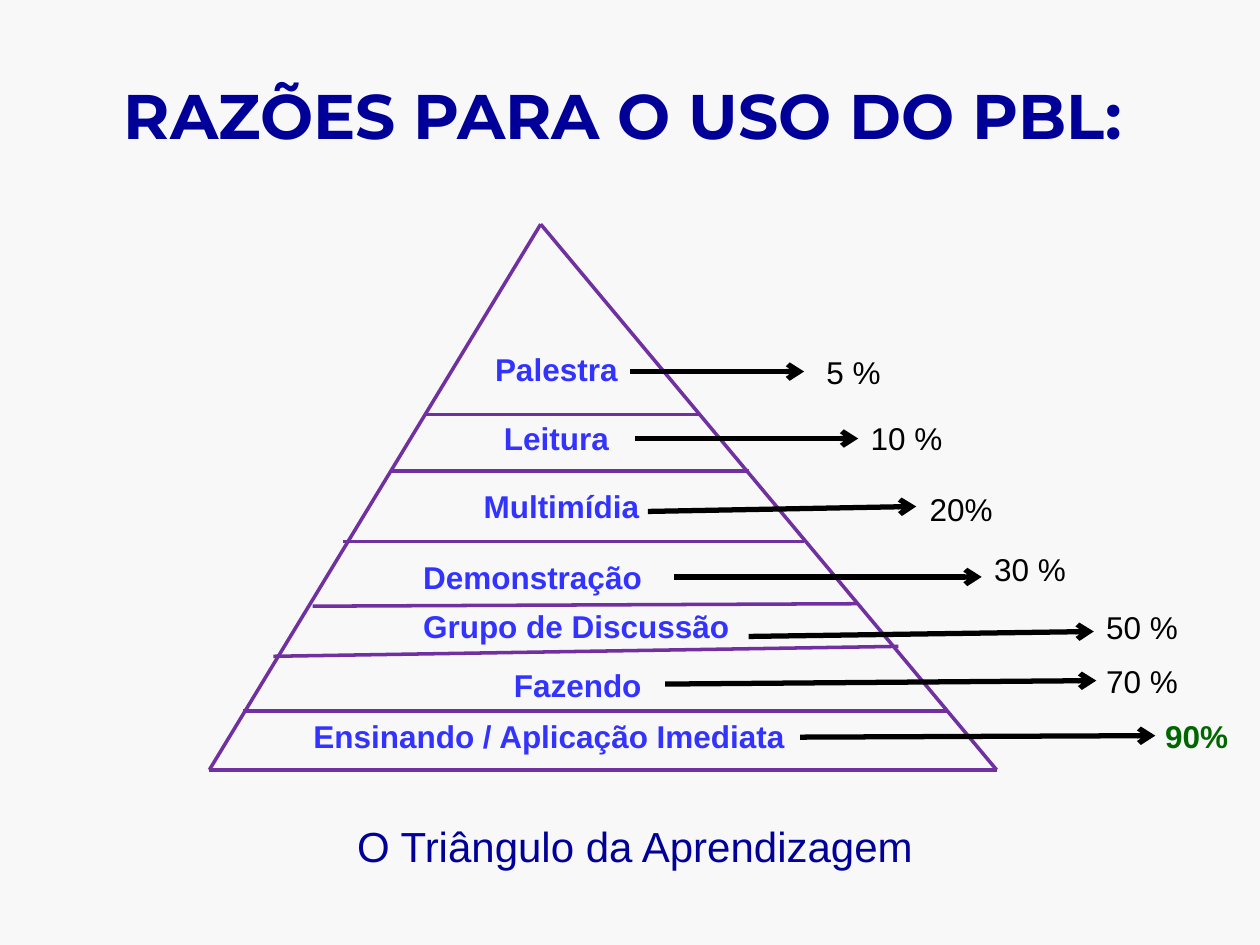
"""Build the learning triangle slide."""
from lxml.etree import SubElement
from pptx import Presentation
from pptx.dml.color import RGBColor
from pptx.enum.shapes import MSO_CONNECTOR
from pptx.enum.text import MSO_AUTO_SIZE, PP_ALIGN
from pptx.oxml.ns import qn
from pptx.util import Cm, Pt

THEME = {
    "bg": "F8F8F8", "navy": "000099", "label": "3333FF", "text": "000000",
    "accent": "006600", "edge": "7030A0",
    "heading_font": "Montserrat", "body_font": "Arial",
    "title_size": 36, "caption_size": 24, "body_size": 18,
    "edge_width": 2, "arrow_width": 3,
}
TITLE = "RAZÕES PARA O USO DO PBL:"
CAPTION = "O Triângulo da Aprendizagem"
LEVELS = [
    ("Palestra", (9.73, 6.93, 3.38), (12.7, 7.49, 16.21, 7.49), "5 %", (16.41, 6.99)),
    ("Leitura", (9.91, 8.33, 4.6), (12.8, 8.84, 17.3, 8.84), "10 %", (17.3, 8.33)),
    ("Multimídia", (9.5, 9.7, 4.6), (13.06, 10.31, 18.47, 10.21), "20%", (18.49, 9.75)),
    ("Demonstração", (8.28, 11.13, 5.44), (13.59, 11.63, 19.79, 11.63), "30 %", (19.79, 10.97)),
    ("Grupo de Discussão", (8.28, 12.12, 6.76), (15.09, 12.83, 22.05, 12.73), "50 %", (22.05, 12.14)),
    ("Fazendo", (10.11, 13.31, 4.6), (13.41, 13.79, 22.1, 13.72), "70 %", (22.05, 13.23)),
    ("Ensinando / Aplicação Imediata", (6.07, 14.33, 10.59), (16.13, 14.86, 23.29, 14.83), "90%", (23.24, 14.33)),
]
APEX, BASE_LEFT, BASE_RIGHT = (10.9, 4.52), (4.22, 15.52), (20.09, 15.52)
DIVIDERS = [
    (8.59, 8.36, 14.1, 8.36), (7.9, 9.5, 15.09, 9.5),
    (6.91, 10.92, 16.21, 10.92), (6.3, 12.22, 17.3, 12.17),
    (5.51, 13.23, 18.11, 13.03), (4.9, 14.33, 19.1, 14.33),
]
ROW_HEIGHT, PERCENT_WIDTH = 1.02, 2.1


def add_text(s, text, box, color, size="body_size", font="body_font",
             bold=False, align=PP_ALIGN.LEFT, wrap=True):
    tf = s.shapes.add_textbox(*map(Cm, box)).text_frame
    tf.word_wrap = wrap
    tf.auto_size = MSO_AUTO_SIZE.SHAPE_TO_FIT_TEXT
    tf.text = text
    p = tf.paragraphs[0]
    p.alignment = align
    f = p.runs[0].font
    f.name, f.size, f.bold = THEME[font], Pt(THEME[size]), bold
    f.color.rgb = RGBColor.from_string(THEME[color])


def add_line(s, ends, color, width, arrow=False):
    cx = s.shapes.add_connector(MSO_CONNECTOR.STRAIGHT, *map(Cm, ends))
    cx.line.color.rgb = RGBColor.from_string(THEME[color])
    cx.line.width = Pt(THEME[width])
    if arrow:
        SubElement(cx.line._get_or_add_ln(), qn("a:tailEnd"), type="arrow")
    SubElement(cx._element.spPr, qn("a:effectLst"))


def main():
    prs = Presentation()
    prs.slide_width, prs.slide_height = Cm(25.4), Cm(19.05)
    s = prs.slides.add_slide(prs.slide_layouts[6])
    s.background.fill.solid()
    s.background.fill.fore_color.rgb = RGBColor.from_string(THEME["bg"])

    add_text(s, TITLE, (1.7, 1.42, 21.72, 1.8), "navy", "title_size",
             "heading_font", True, PP_ALIGN.CENTER, False)
    add_text(s, CAPTION, (6.55, 16.41, 12.5, 1.27), "navy", "caption_size",
             align=PP_ALIGN.CENTER, wrap=False)

    sides = [APEX + BASE_LEFT, APEX + BASE_RIGHT, BASE_LEFT + BASE_RIGHT]
    for ends in sides + DIVIDERS:
        add_line(s, ends, "edge", "edge_width")

    for label, box, arrow, percent, corner in LEVELS:
        last = label == LEVELS[-1][0]
        add_text(s, label, (*box, ROW_HEIGHT), "label", bold=True)
        add_line(s, arrow, "text", "arrow_width", arrow=True)
        add_text(s, percent, (*corner, PERCENT_WIDTH, ROW_HEIGHT),
                 "accent" if last else "text", bold=last)

    prs.save("out.pptx")


if __name__ == "__main__":
    main()
